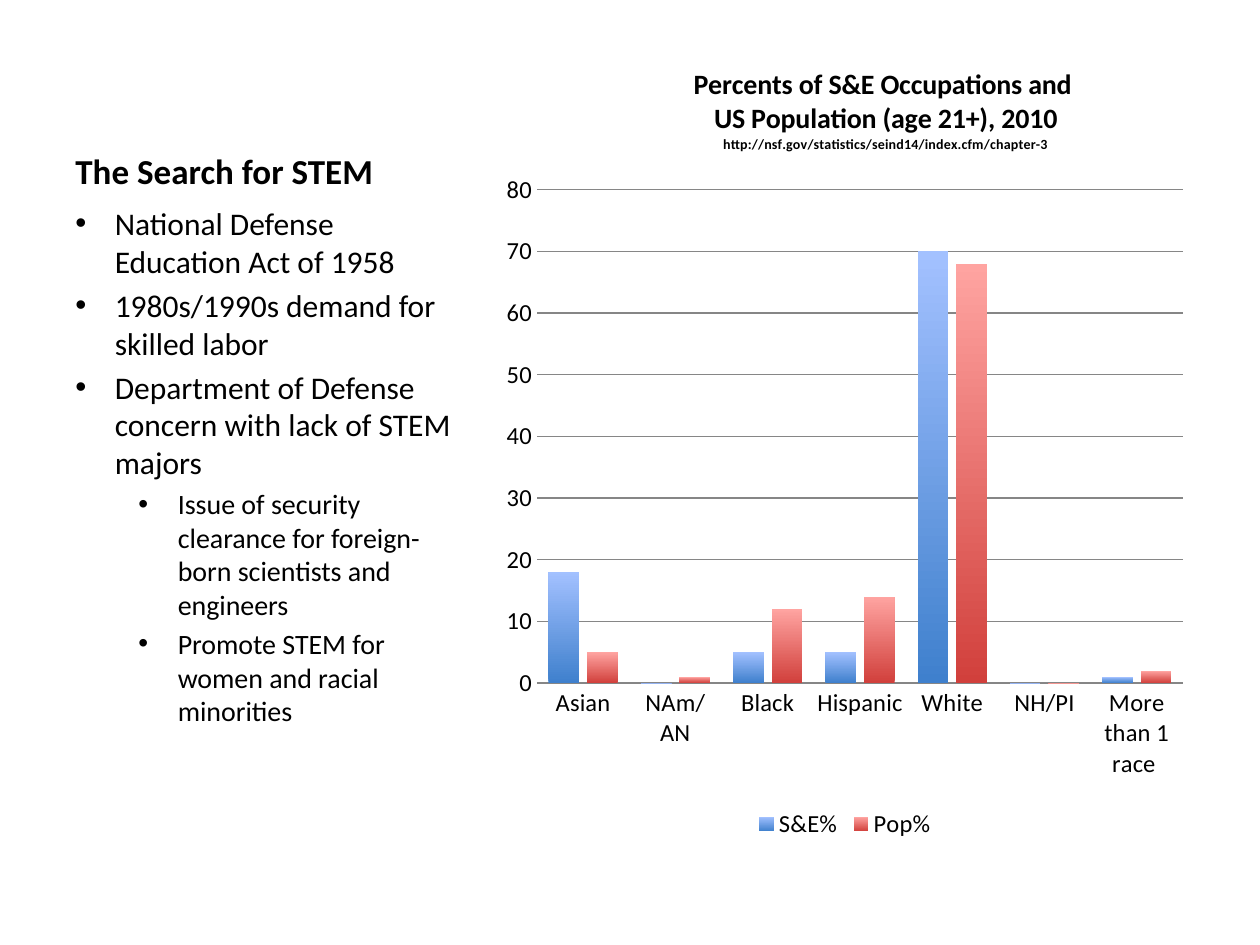
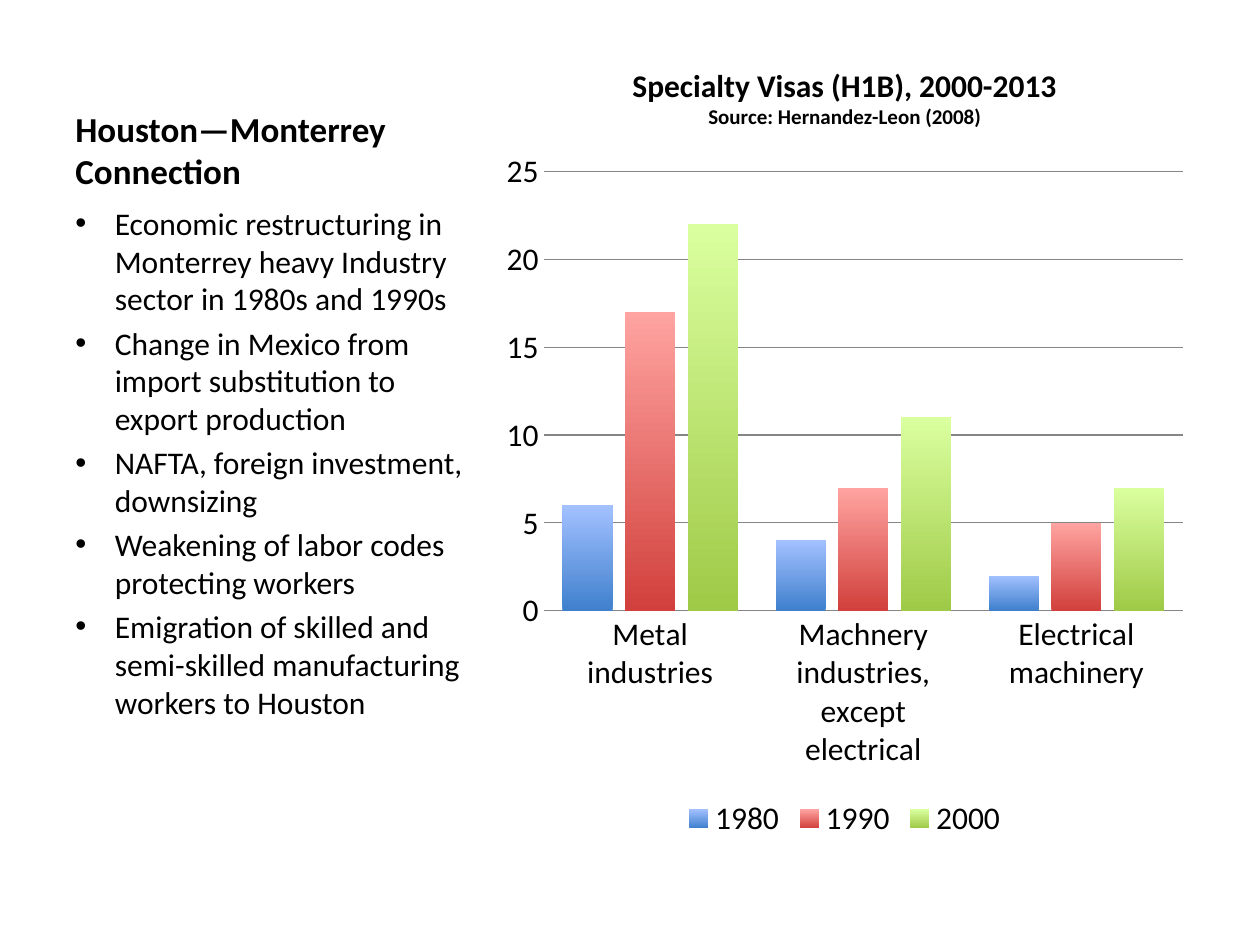
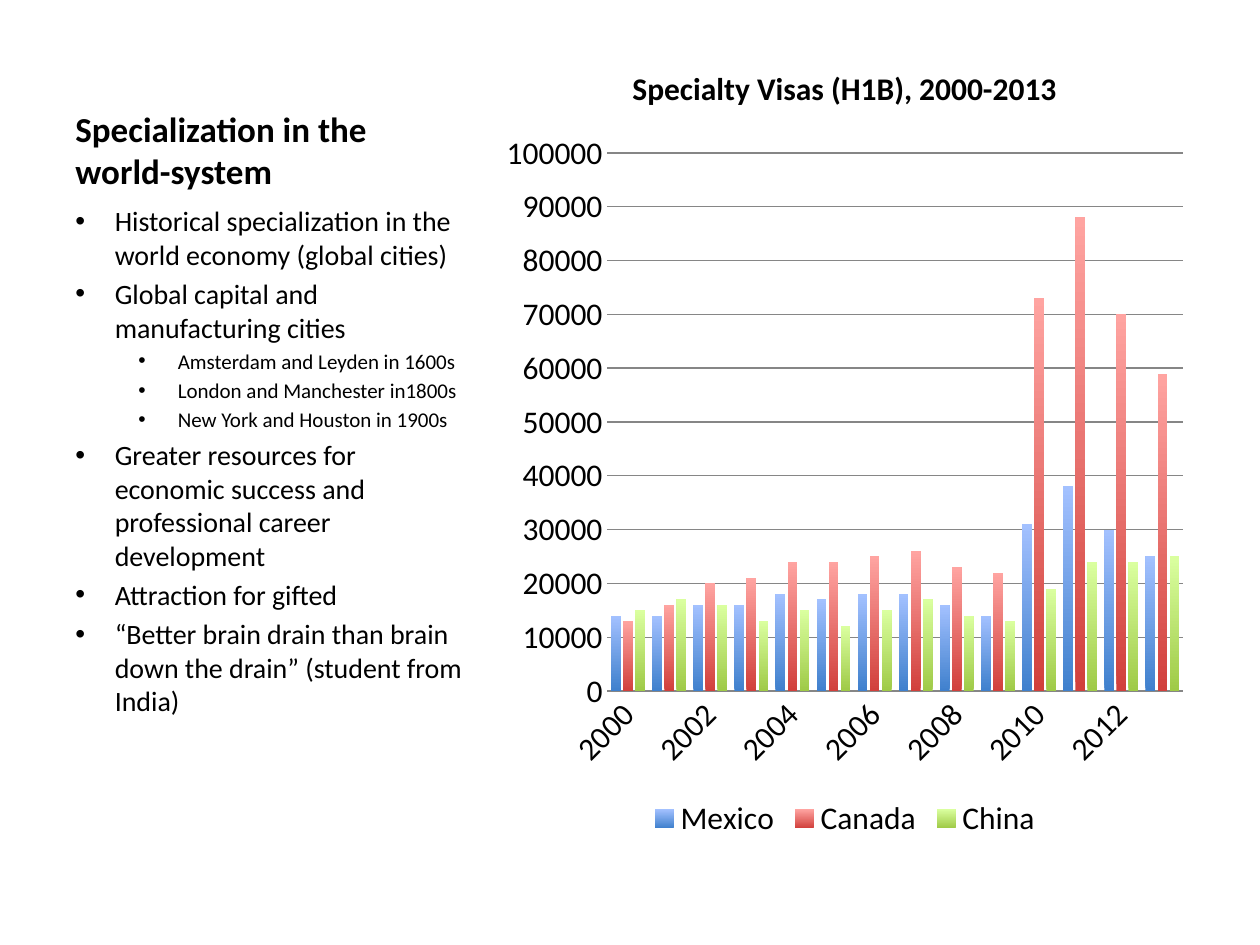
from pptx import Presentation
from pptx.chart.data import CategoryChartData
from pptx.dml.color import RGBColor
from pptx.enum.chart import XL_CHART_TYPE, XL_LEGEND_POSITION, XL_TICK_MARK
from pptx.enum.text import MSO_ANCHOR
from pptx.oxml import parse_xml
from pptx.oxml.ns import nsdecls
from pptx.util import Pt

COLUMNS = XL_CHART_TYPE.COLUMN_CLUSTERED
BOTTOM_LEGEND = XL_LEGEND_POSITION.BOTTOM
NO_TICK = XL_TICK_MARK.NONE
TOP = MSO_ANCHOR.TOP
BOTTOM = MSO_ANCHOR.BOTTOM

BLACK = RGBColor(0x00, 0x00, 0x00)
GRID_GRAY = RGBColor(0x86, 0x86, 0x86)
BLUE = RGBColor(0x3F, 0x80, 0xCD)
LIGHT_BLUE = RGBColor(0xA3, 0xC1, 0xFF)
RED = RGBColor(0xD1, 0x40, 0x3C)
LIGHT_RED = RGBColor(0xFF, 0xA4, 0xA1)
GREEN = RGBColor(0x9F, 0xCA, 0x47)
LIGHT_GREEN = RGBColor(0xDA, 0xFF, 0x9F)
SERIES_COLORS = [(BLUE, LIGHT_BLUE), (RED, LIGHT_RED), (GREEN, LIGHT_GREEN)]

FONT = "Calibri"
TITLE_SIZE = 20
LEFT, TOP_EDGE = 36, 21.6
TEXT_WIDTH, TITLE_HEIGHT, BODY_HEIGHT = 236.9, 91.4, 369.4
CHART_LEFT, CHART_WIDTH = 281.5, 402.5
BULLET_INDENT, LEVEL_STEP = 22.5, 36


def apply_format(target, values):
    for name, value in values.items():
        setattr(target, name, value)


class Deck:
    def __init__(self):
        self.deck = Presentation()
        apply_format(self.deck, {"slide_width": Pt(720), "slide_height": Pt(540)})
        self.page = None

    def add_page(self):
        self.page = self.deck.slides.add_slide(self.deck.slide_layouts[6])

    def style_font(self, font, size, bold=False):
        apply_format(font, {"name": FONT, "size": Pt(size), "bold": bold})
        font.color.rgb = BLACK

    def add_frame(self, top, height, anchor):
        box = self.page.shapes.add_textbox(Pt(LEFT), Pt(top), Pt(TEXT_WIDTH), Pt(height))
        apply_format(box.text_frame, {"word_wrap": True, "vertical_anchor": anchor})
        return box.text_frame

    def write_lines(self, frame, lines, bold=False):
        for number, (text, size) in enumerate(lines):
            para = frame.add_paragraph() if number else frame.paragraphs[0]
            span = para.add_run()
            span.text = text
            self.style_font(span.font, size, bold)

    def add_title(self, text):
        frame = self.add_frame(TOP_EDGE, TITLE_HEIGHT, BOTTOM)
        self.write_lines(frame, [(text, TITLE_SIZE)], bold=True)

    def add_bullets(self, items, sizes):
        frame = self.add_frame(TOP_EDGE + TITLE_HEIGHT, BODY_HEIGHT, TOP)
        self.write_lines(frame, [(text, sizes[level]) for level, text in items])
        for para, (level, _) in zip(frame.paragraphs, items):
            apply_format(para, {"level": level, "space_before": Pt(0.2 * sizes[level])})
            properties = para._p.get_or_add_pPr()
            properties.set("marL", str(Pt(BULLET_INDENT + level * LEVEL_STEP)))
            properties.set("indent", str(-Pt(BULLET_INDENT)))
            for tag in (f'<a:buFont {nsdecls("a")} typeface="Arial"/>',
                        f'<a:buChar {nsdecls("a")} char="•"/>'):
                properties.append(parse_xml(tag))

    def add_column_chart(self, title_lines, categories, series, size, maximum, step):
        data = CategoryChartData()
        data.categories = categories
        for name, values in series.items():
            data.add_series(name, values)
        chart = self.page.shapes.add_chart(
            COLUMNS, Pt(CHART_LEFT), Pt(TOP_EDGE), Pt(CHART_WIDTH),
            Pt(TITLE_HEIGHT + BODY_HEIGHT), data).chart
        self.style_font(chart.font, size)
        self.write_lines(chart.chart_title.text_frame, title_lines, bold=True)
        chart.has_legend = True
        apply_format(chart.legend, {"position": BOTTOM_LEGEND, "include_in_layout": False})
        self.style_font(chart.legend.font, size)
        self.style_axes(chart, size, maximum, step)
        self.style_columns(chart.plots[0])
        return chart

    def style_axes(self, chart, size, maximum, step):
        for axis in (chart.category_axis, chart.value_axis):
            apply_format(axis, {"major_tick_mark": NO_TICK, "minor_tick_mark": NO_TICK})
            self.style_font(axis.tick_labels.font, size)
        axis = chart.value_axis
        apply_format(axis, {"minimum_scale": 0, "maximum_scale": maximum,
                            "major_unit": step, "has_major_gridlines": True})
        axis.format.line.fill.background()
        for line in (axis.major_gridlines.format.line, chart.category_axis.format.line):
            line.width = Pt(0.75)
            line.color.rgb = GRID_GRAY

    def style_columns(self, plot):
        apply_format(plot, {"gap_width": 75, "overlap": -25, "vary_by_categories": False})
        for columns, colors in zip(plot.series, SERIES_COLORS):
            fill = columns.format.fill
            fill.gradient()
            fill.gradient_angle = 90
            for stop, color in zip(fill.gradient_stops, colors):
                stop.color.rgb = color

    def move_chart_title(self, chart, x, y):
        layout = chart.element.xpath("c:chart/c:title/c:layout")[0]
        layout.append(parse_xml(
            f'<c:manualLayout {nsdecls("c")}><c:xMode val="edge"/><c:yMode val="edge"/>'
            f'<c:x val="{x}"/><c:y val="{y}"/></c:manualLayout>'))

    def tilt_category_labels(self, chart, degrees):
        body = chart.element.xpath(".//c:catAx/c:txPr/a:bodyPr")[0]
        body.set("rot", str(-degrees * 60000))


def add_search_page(deck):
    deck.add_page()
    deck.add_title("The Search for STEM")
    chart = deck.add_column_chart(
        [("Percents of S&E Occupations and ", 16),
         ("US Population (age 21+), 2010", 16),
         ("http://nsf.gov/statistics/seind14/index.cfm/chapter-3", 8)],
        ["Asian", "NAm/AN", "Black", "Hispanic", "White", "NH/PI", "More than 1 race "],
        {"S&E%": [18, 0, 5, 5, 70, 0, 1], "Pop%": [5, 1, 12, 14, 68, 0, 2]},
        size=14, maximum=80, step=10)
    deck.move_chart_title(chart, 0.28, 0.03)
    deck.add_bullets([
        (0, "National Defense Education Act of 1958"),
        (0, "1980s/1990s demand for skilled labor"),
        (0, "Department of Defense concern with lack of STEM majors"),
        (1, "Issue of security clearance for foreign-born scientists and engineers"),
        (1, "Promote STEM for women and racial minorities"),
    ], sizes=(18, 16))


def add_connection_page(deck):
    deck.add_page()
    deck.add_title("Houston—Monterrey Connection")
    deck.add_column_chart(
        [("Specialty Visas (H1B), 2000-2013", 18), ("Source: Hernandez-Leon (2008)", 12)],
        ["Metal industries", "Machnery industries, except electrical", "Electrical machinery"],
        {"1980": [6, 4, 2], "1990": [17, 7, 5], "2000": [22, 11, 7]},
        size=18, maximum=25, step=5)
    deck.add_bullets([
        (0, "Economic restructuring in Monterrey heavy Industry sector in 1980s and 1990s"),
        (0, "Change in Mexico from import substitution to export production"),
        (0, "NAFTA, foreign investment, downsizing"),
        (0, "Weakening of labor codes protecting workers"),
        (0, "Emigration of skilled and semi-skilled manufacturing workers to Houston"),
    ], sizes=(18, 16))


def add_specialization_page(deck):
    deck.add_page()
    deck.add_title("Specialization in the world-system")
    visas_in_thousands = {
        "Mexico": [14, 14, 16, 16, 18, 17, 18, 18, 16, 14, 31, 38, 30, 25],
        "Canada": [13, 16, 20, 21, 24, 24, 25, 26, 23, 22, 73, 88, 70, 59],
        "China": [15, 17, 16, 13, 15, 12, 15, 17, 14, 13, 19, 24, 24, 25],
    }
    chart = deck.add_column_chart(
        [("Specialty Visas (H1B), 2000-2013", 18)],
        [str(year) for year in range(2000, 2014)],
        {country: [value * 1000 for value in values]
         for country, values in visas_in_thousands.items()},
        size=18, maximum=100000, step=10000)
    deck.tilt_category_labels(chart, 45)
    deck.add_bullets([
        (0, "Historical specialization in the world economy (global cities)"),
        (0, "Global capital and manufacturing cities"),
        (1, "Amsterdam and Leyden in 1600s"),
        (1, "London and Manchester in1800s"),
        (1, "New York and Houston in 1900s"),
        (0, "Greater resources for economic success and professional career development"),
        (0, "Attraction for gifted"),
        (0, "“Better brain drain than brain down the drain” (student from India)"),
    ], sizes=(16, 12))


def main():
    deck = Deck()
    add_search_page(deck)
    add_connection_page(deck)
    add_specialization_page(deck)
    deck.deck.save("out.pptx")


if __name__ == "__main__":
    main()
